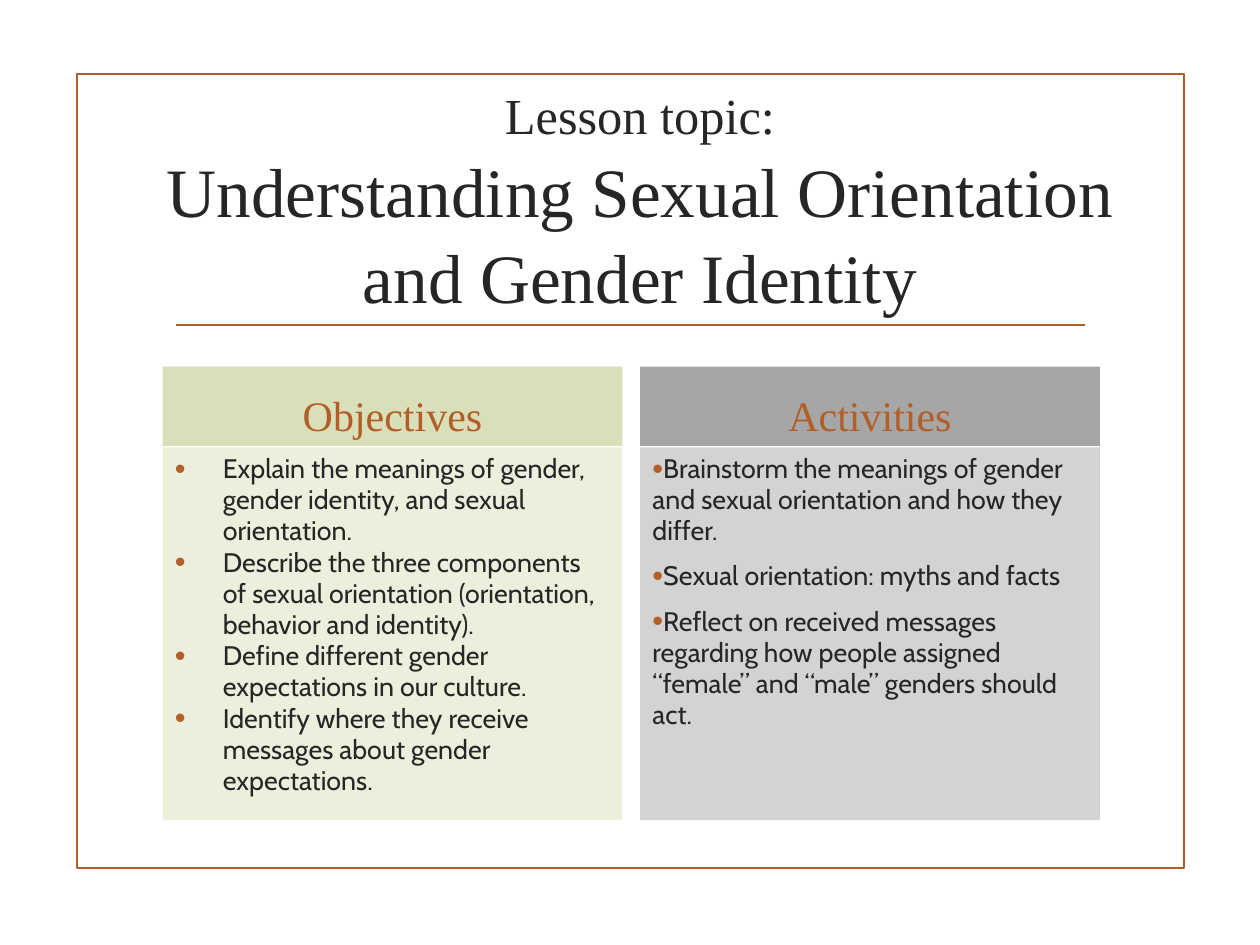
"""Build the lesson topic slide with its objectives and activities columns."""
from dataclasses import dataclass

from lxml import etree
from pptx import Presentation
from pptx.dml.color import RGBColor as RGB
from pptx.enum.shapes import MSO_CONNECTOR as CONN, MSO_SHAPE as SHAPE
from pptx.enum.text import MSO_ANCHOR as ANCHOR, PP_ALIGN as ALIGN
from pptx.oxml.ns import qn
from pptx.util import Inches, Pt


@dataclass(frozen=True)
class Theme:
    accent: str = "B15E28"
    ink: str = "262626"
    heading_font: str = "Times New Roman"
    body_font: str = "Cabin"
    kicker: float = 28.8
    title: float = 39.6
    heading: float = 24
    body: float = 15.3
    line: float = 1.25


theme = Theme()


def style(r, size, font, color):
    r.font.size = Pt(size)
    r.font.name = font
    r.font.color.rgb = RGB.from_string(color)


def add_panel(left, top, width, height, fill, anchor):
    sp = s.shapes.add_shape(SHAPE.RECTANGLE, Inches(left), Inches(top), Inches(width), Inches(height))
    sp.shadow.inherit = False
    sp.fill.solid()
    sp.fill.fore_color.rgb = RGB.from_string(fill)
    sp.line.fill.background()
    sp.text_frame.word_wrap = True
    sp.text_frame.vertical_anchor = anchor
    return sp.text_frame


prs = Presentation()
prs.slide_width, prs.slide_height = Inches(10), Inches(7.5)
s = prs.slides.add_slide(prs.slide_layouts[6])

frame = s.shapes.add_shape(SHAPE.RECTANGLE, Inches(0.61), Inches(0.59), Inches(8.79), Inches(6.3))
frame.shadow.inherit = False
frame.fill.background()
rule = s.shapes.add_connector(CONN.STRAIGHT, Inches(1.4), Inches(2.58), Inches(8.61), Inches(2.58))
etree.SubElement(rule.element.spPr, qn("a:effectLst"))
for sp in (frame, rule):
    sp.line.color.rgb = RGB.from_string(theme.accent)
    sp.line.width = Pt(theme.line)

tf = s.shapes.add_textbox(Inches(0.81), Inches(0.77), Inches(8.54), Inches(1.63)).text_frame
tf.word_wrap = True
tf.vertical_anchor = ANCHOR.MIDDLE
p = tf.paragraphs[0]
p.text = "Lesson topic:\vUnderstanding Sexual Orientation and Gender Identity"
p.alignment = ALIGN.CENTER
p.line_spacing = 1.04
for r, size in zip(p.runs, (theme.kicker, theme.title)):
    style(r, size, theme.heading_font, theme.ink)

columns = [
    ("Objectives", 1.29, "D8DFB9", "ECEFDC", 0.38, -0.38, 0, [
        "Explain the meanings of gender, gender identity, and sexual orientation.",
        "Describe the three components of sexual orientation (orientation, behavior and identity).",
        "Define different gender expectations in our culture.",
        "Identify where they receive messages about gender expectations.",
    ]),
    ("Activities", 5.08, "A6A6A6", "D3D3D3", 0, -0.31, 8, [
        "Brainstorm the meanings of gender and sexual orientation and how they differ.",
        "Sexual orientation: myths and facts",
        "Reflect on received messages regarding how people assigned “female” and “male” genders should act.",
    ]),
]
for heading, left, head_fill, body_fill, margin, indent, gap, items in columns:
    tf = add_panel(left, 2.91, 3.65, 0.63, head_fill, ANCHOR.BOTTOM)
    tf.text = heading
    p = tf.paragraphs[0]
    p.alignment = ALIGN.CENTER
    style(p.runs[0], theme.heading, theme.heading_font, theme.accent)

    tf = add_panel(left, 3.55, 3.65, 2.96, body_fill, ANCHOR.TOP)
    tf.text = "\n".join(items)
    for p in tf.paragraphs:
        p.alignment = ALIGN.LEFT
        p.line_spacing = 0.97
        p.space_after = Pt(gap)
        pPr = p._p.get_or_add_pPr()
        pPr.set("marL", str(Inches(margin)))
        pPr.set("indent", str(Inches(indent)))
        bullet_color = etree.SubElement(pPr, qn("a:buClr"))
        etree.SubElement(bullet_color, qn("a:srgbClr"), val=theme.accent)
        etree.SubElement(pPr, qn("a:buSzPct"), val="115000")
        etree.SubElement(pPr, qn("a:buFont"), typeface="Arial")
        etree.SubElement(pPr, qn("a:buChar"), char="•")
        style(p.runs[0], theme.body, theme.body_font, theme.ink)

prs.save("out.pptx")
